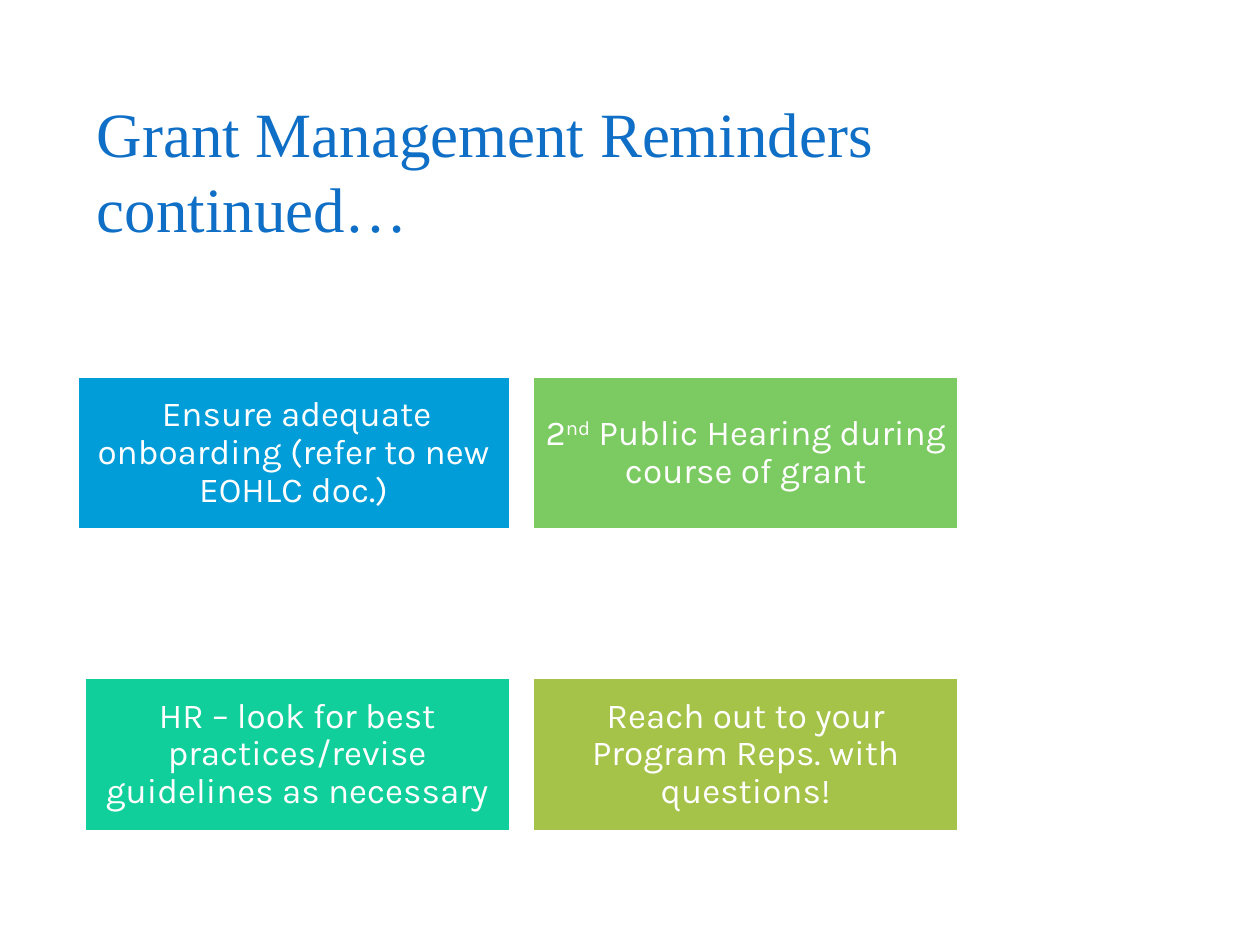
from pptx import Presentation
from pptx.dml.color import RGBColor
from pptx.enum.shapes import MSO_SHAPE as SHAPE
from pptx.enum.text import MSO_ANCHOR as ANCHOR, PP_ALIGN as ALIGN
from pptx.util import Cm, Pt


def rgb(value):
    return RGBColor.from_string(value)


def apply(obj, values):
    for name, value in values.items():
        setattr(obj, name, value)


class Deck:
    TITLE_FONT = {"name": "Times New Roman", "size": Pt(36), "bold": False}
    CARD_FONT = {"name": "Karla", "size": Pt(20)}
    TITLE_FRAME = {"word_wrap": True, "vertical_anchor": ANCHOR.TOP,
                   "margin_left": Cm(0.25), "margin_right": Cm(0.25),
                   "margin_top": Cm(0.21), "margin_bottom": Cm(0.13)}
    CARD_FRAME = {"word_wrap": True, "vertical_anchor": ANCHOR.MIDDLE,
                  "margin_left": Cm(0.18), "margin_right": Cm(0.18),
                  "margin_top": Cm(0.18), "margin_bottom": Cm(0.18)}

    def __init__(self, prs):
        self.s = prs.slides.add_slide(prs.slide_layouts[5])

    def title(self, text, left, top, width, height):
        sp = self.s.shapes.title
        apply(sp, {"left": Cm(left), "top": Cm(top),
                   "width": Cm(width), "height": Cm(height)})
        tf = sp.text_frame
        apply(tf, self.TITLE_FRAME)
        p = tf.paragraphs[0]
        apply(p, {"alignment": ALIGN.LEFT, "line_spacing": Pt(43)})
        r = p.add_run()
        r.text = text
        apply(r.font, self.TITLE_FONT)
        r.font.color.rgb = rgb("0F6FC6")

    def card(self, runs, fill, left, top, width, height):
        sp = self.s.shapes.add_shape(SHAPE.RECTANGLE, Cm(left), Cm(top),
                                     Cm(width), Cm(height))
        sp.shadow.inherit = False
        sp.fill.solid()
        sp.fill.fore_color.rgb = rgb(fill)
        sp.line.color.rgb = rgb("FFFFFF")
        sp.line.width = Pt(2)
        tf = sp.text_frame
        apply(tf, self.CARD_FRAME)
        p = tf.paragraphs[0]
        apply(p, {"alignment": ALIGN.CENTER, "line_spacing": 0.9})
        for text, extra in runs:
            r = p.add_run()
            r.text = text
            apply(r.font, self.CARD_FONT)
            r.font.color.rgb = rgb("FFFFFF")
            if "size" in extra:
                r.font.size = Pt(extra["size"])
            if "baseline" in extra:
                r.font._element.set("baseline", str(extra["baseline"]))


def main():
    prs = Presentation()
    apply(prs, {"slide_width": Cm(25.4), "slide_height": Cm(19.05)})
    deck = Deck(prs)

    # Title
    deck.title("Grant Management Reminders continued…", 1.7, 1.7, 17.63, 3.66)

    # Reminder cards: column, row, fill, growth to the left, runs
    left, top, width, height = 1.7, 7.59, 8.59, 3.1
    col_step, row_step = 9.04, 6.07
    cards = [
        (0, 1, "10CF9B", 0,
         [("HR – look for best practices/revise guidelines as necessary", {})]),
        (1, 0, "7CCA62", 0,
         [("2", {}), ("nd", {"baseline": 30000}),
          (" Public Hearing during course of grant", {})]),
        (1, 1, "A5C249", 0,
         [("Reach out to your Program Reps. with questions!", {})]),
        (0, 0, "009DD9", 0.15,
         [(" ", {"size": 14.9}),
          ("Ensure adequate onboarding (refer to new EOHLC doc.)", {})]),
    ]
    for col, row, fill, grow, runs in cards:
        deck.card(runs, fill, left + col * col_step - grow,
                  top + row * row_step, width + grow, height)

    prs.save("out.pptx")


if __name__ == "__main__":
    main()
